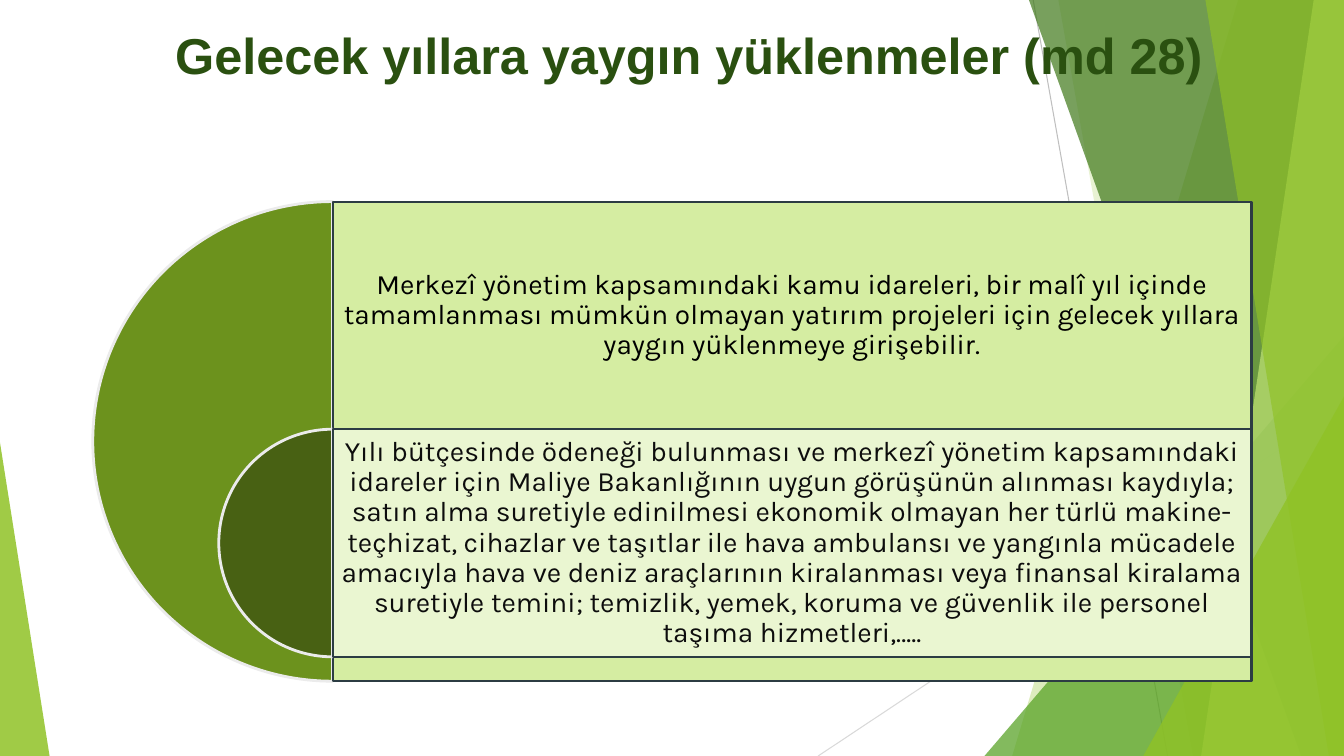
from dataclasses import dataclass

from lxml.etree import SubElement
from pptx import Presentation
from pptx.dml.color import RGBColor
from pptx.enum.shapes import MSO_CONNECTOR, MSO_SHAPE as Preset
from pptx.enum.text import MSO_ANCHOR as Anchor, MSO_AUTO_SIZE as AutoSize, PP_ALIGN as Align
from pptx.oxml.ns import qn
from pptx.shapes.autoshape import Shape
from pptx.slide import Slide
from pptx.text.text import TextFrame
from pptx.util import Inches, Pt

# The slide is a grid of 160 columns by 90 rows
COLUMNS, ROWS = 160, 90
CELL = Inches(7.5) / ROWS


@dataclass(frozen=True)
class Theme:
    title_font: str = "Arial"
    body_font: str = "Karla"
    title_size: int = 36
    body_size: int = 20
    title: str = "2A5010"
    lime: str = "90C226"
    leaf: str = "54A021"
    forest: str = "3F7819"
    pale: str = "C0E474"
    ray_dark: str = "BFBFBF"
    ray_light: str = "D9D9D9"
    pie_edge: str = "EBEBEB"
    panel_edge: str = "2C3C43"


@dataclass(frozen=True)
class Ray:
    start: tuple[float, float]
    end: tuple[float, float]
    color: str


@dataclass(frozen=True)
class Band:
    """Full-height facet that reaches the right edge of the slide."""
    top_column: float
    bottom_column: float
    color: str
    opacity: int


@dataclass(frozen=True)
class Wedge:
    """Right triangle that stands on the bottom edge of the slide."""
    left: float
    top: float
    width: float
    apex: int
    color: str
    opacity: int


@dataclass(frozen=True)
class Level:
    text: str
    text_color: str
    pie_color: str
    panel_color: str
    top: float
    diameter: float


THEME = Theme()

RAYS = [
    Ray((123, 0), (139, ROWS), THEME.ray_dark),
    Ray((COLUMNS, 48.4), (97.4, ROWS), THEME.ray_light),
]
FACETS: list[Band | Wedge] = [
    Band(147.4, 120.5, THEME.lime, 30),
    Band(126, 142, THEME.lime, 20),
    Wedge(117.2, 40, 42.8, 1, THEME.leaf, 72),
    Band(122.5, 154.9, THEME.forest, 70),
    Band(156.4, 143, THEME.pale, 70),
    Band(143.5, 158.2, THEME.lime, 65),
    Wedge(136.1, 47.2, 23.9, 1, THEME.lime, 80),
    Wedge(0, 52.7, 5.9, 0, THEME.lime, 85),
]

# Two nested levels share one vertical axis
AXIS, PANEL_WIDTH = 39.6, 109.4
FIRST_TOP, OUTER, INNER = 24, 57.1, 27.1
LEVELS = [
    Level(
        "Merkezî yönetim kapsamındaki kamu idareleri, bir malî yıl içinde "
        "tamamlanması mümkün olmayan yatırım projeleri için gelecek yıllara "
        "yaygın yüklenmeye girişebilir.",
        "000000", "6C921D", "D5EDA2", FIRST_TOP, OUTER),
    Level(
        "Yılı bütçesinde ödeneği bulunması ve merkezî yönetim kapsamındaki "
        "idareler için Maliye Bakanlığının uygun görüşünün alınması kaydıyla; "
        "satın alma suretiyle edinilmesi ekonomik olmayan her türlü "
        "makine-teçhizat, cihazlar ve taşıtlar ile hava ambulansı ve yangınla "
        "mücadele amacıyla hava ve deniz araçlarının kiralanması veya finansal "
        "kiralama suretiyle temini; temizlik, yemek, koruma ve güvenlik ile "
        "personel taşıma hizmetleri,…..",
        "0D0D0D", "486113", "EAF6D1", FIRST_TOP + INNER, INNER),
]


def cells(*counts: float) -> list[int]:
    return [round(count * CELL) for count in counts]


def paint(shape: Shape, color: str, opacity: int = 100) -> None:
    shape.shadow.inherit = False
    shape.fill.solid()
    shape.fill.fore_color.rgb = RGBColor.from_string(color)
    shape.line.fill.background()
    if opacity < 100:
        tint = shape.fill._xPr.find(".//" + qn("a:srgbClr"))
        SubElement(tint, qn("a:alpha"), val=str(opacity * 1000))


def outline(shape: Shape, color: str, width: float) -> None:
    shape.line.color.rgb = RGBColor.from_string(color)
    shape.line.width = Pt(width)


def write(frame: TextFrame, text: str, font: str, size: int, color: str,
          bold: bool = False) -> None:
    frame.word_wrap = True
    frame.auto_size = AutoSize.NONE
    para = frame.paragraphs[0]
    para.alignment = Align.CENTER
    span = para.add_run()
    span.text = text
    span.font.name, span.font.size, span.font.bold = font, Pt(size), bold
    span.font.color.rgb = RGBColor.from_string(color)


def draw_ray(page: Slide, ray: Ray) -> None:
    line = page.shapes.add_connector(MSO_CONNECTOR.STRAIGHT, *cells(*ray.start, *ray.end))
    line.line.color.rgb = RGBColor.from_string(ray.color)
    line.line.width = Pt(0.75)
    SubElement(line._element.spPr, qn("a:effectLst"))


def draw_facet(page: Slide, facet: Band | Wedge) -> None:
    if isinstance(facet, Band):
        builder = page.shapes.build_freeform(*cells(facet.top_column, 0))
        corners = [(COLUMNS, 0), (COLUMNS, ROWS), (facet.bottom_column, ROWS)]
        builder.add_line_segments([cells(*corner) for corner in corners], close=True)
        shape = builder.convert_to_shape()
    else:
        shape = page.shapes.add_shape(
            Preset.ISOSCELES_TRIANGLE,
            *cells(facet.left, facet.top, facet.width, ROWS - facet.top))
        shape.adjustments[0] = facet.apex
    paint(shape, facet.color, facet.opacity)


def draw_title(page: Slide, text: str) -> None:
    title = page.shapes.title
    title.left, title.top, title.width, title.height = cells(14.8, 2.3, 134.5, 14.3)
    title.text_frame.vertical_anchor = Anchor.TOP
    write(title.text_frame, text, THEME.title_font, THEME.title_size, THEME.title, bold=True)
    page.shapes._spTree.append(title._element)  # bring in front of the facets


def draw_level(page: Slide, level: Level) -> None:
    size = level.diameter
    pie = page.shapes.add_shape(Preset.PIE, *cells(AXIS - size / 2, level.top, size, size))
    pie.adjustments[0], pie.adjustments[1] = 54, 162  # left half: 90 to 270 degrees
    paint(pie, level.pie_color)
    outline(pie, THEME.pie_edge, 2)

    panel = page.shapes.add_shape(Preset.RECTANGLE, *cells(AXIS, level.top, PANEL_WIDTH, size))
    paint(panel, level.panel_color)
    outline(panel, THEME.panel_edge, 1.5)

    box = page.shapes.add_textbox(*cells(AXIS, level.top, PANEL_WIDTH, INNER))
    frame = box.text_frame
    frame.vertical_anchor = Anchor.MIDDLE
    frame.margin_left = frame.margin_right = Inches(0.08)
    frame.margin_top = frame.margin_bottom = Inches(0.08)
    write(frame, level.text, THEME.body_font, THEME.body_size, level.text_color)
    frame.paragraphs[0].line_spacing = 0.9


def main() -> None:
    deck = Presentation()
    deck.slide_width, deck.slide_height = cells(COLUMNS, ROWS)
    page = deck.slides.add_slide(deck.slide_layouts.get_by_name("Title Only"))

    # Background
    for ray in RAYS:
        draw_ray(page, ray)
    for facet in FACETS:
        draw_facet(page, facet)

    # Content
    draw_title(page, "Gelecek yıllara yaygın yüklenmeler (md 28)")
    for level in LEVELS:
        draw_level(page, level)

    deck.save("out.pptx")


if __name__ == "__main__":
    main()
